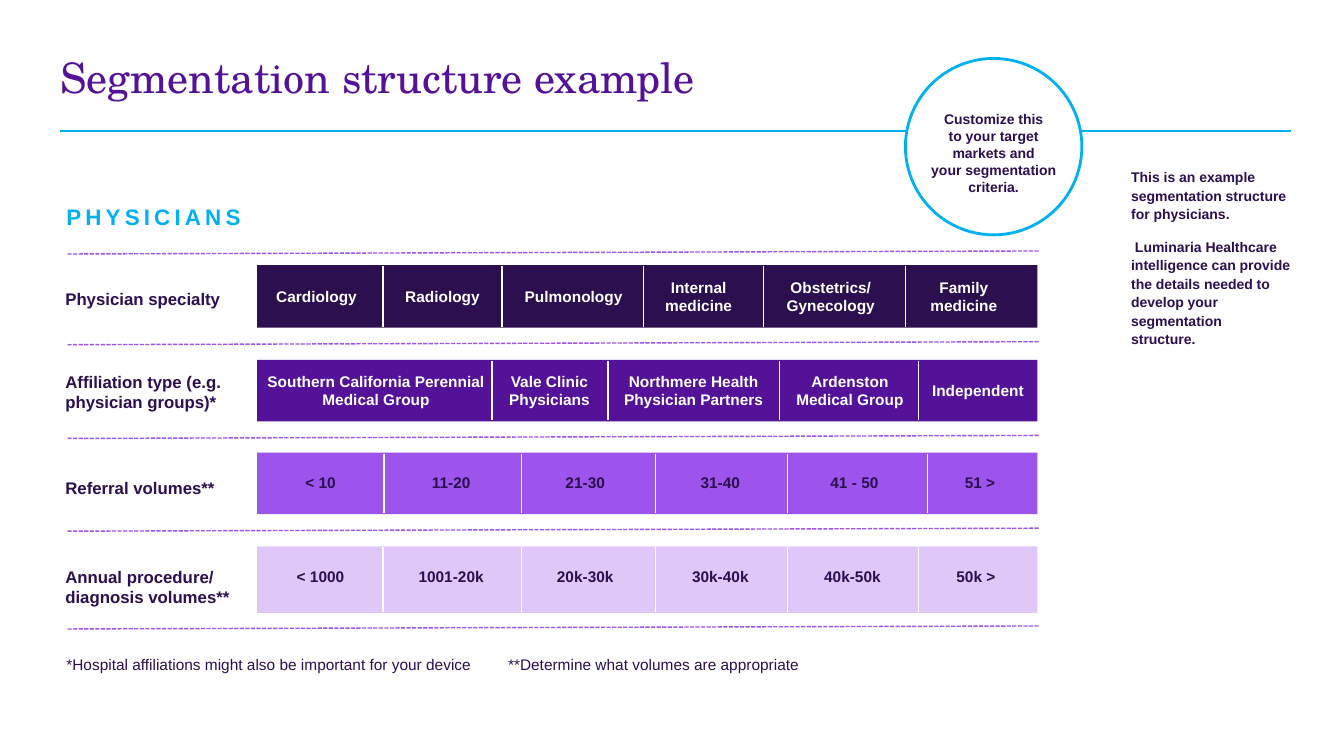
from pptx import Presentation
from pptx.dml.color import RGBColor
from pptx.enum.dml import MSO_LINE
from pptx.enum.shapes import MSO_CONNECTOR, MSO_SHAPE
from pptx.enum.text import MSO_ANCHOR, PP_ALIGN
from pptx.oxml.ns import qn
from pptx.util import Inches, Pt
from lxml import etree

STRAIGHT = MSO_CONNECTOR.STRAIGHT
RECTANGLE, OVAL = MSO_SHAPE.RECTANGLE, MSO_SHAPE.OVAL
TOP, MIDDLE = MSO_ANCHOR.TOP, MSO_ANCHOR.MIDDLE
LEFT, CENTER = PP_ALIGN.LEFT, PP_ALIGN.CENTER
DASHED = MSO_LINE.SQUARE_DOT

WHITE, INK, CYAN = "FFFFFF", "2B0F4F", "00B0F0"
PURPLE, VIOLET, LILAC = "541299", "9C54ED", "DFC7F9"
BAND_LEFT, BAND_WIDTH = 2.55, 7.74
CELL_HEIGHT = 0.62

# Each row: label, label top, band top, band height, cell top, fill, text colour,
# cells as (text, left, width), divider positions
ROWS = [
    ("Physician specialty", 2.82, 2.63, 0.62, 2.63, INK, WHITE,
     [("Cardiology", 2.55, 1.18), ("Radiology", 3.91, 0.96),
      ("Pulmonology", 5.07, 1.24), ("Internal medicine", 6.48, 0.9),
      ("Obstetrics/ Gynecology", 7.62, 1.24), ("Family medicine", 9.11, 0.9)],
     [3.8, 4.98, 6.38, 7.57, 8.98]),
    ("Affiliation type (e.g. physician groups)*", 3.64, 3.57, 0.61, 3.56, PURPLE, WHITE,
     [("Southern California Perennial Medical Group", 2.52, 2.42),
      ("Vale Clinic Physicians", 4.82, 1.26),
      ("Northmere Health Physician Partners", 6.05, 1.66),
      ("Ardenston Medical Group", 7.69, 1.48), ("Independent", 9.07, 1.26)],
     [4.88, 6.03, 7.73, 9.11]),
    ("Referral volumes**", 4.69, 4.49, 0.61, 4.48, VIOLET, INK,
     [("< 10", 2.73, 0.9), ("11-20", 3.99, 0.97), ("21-30", 5.32, 0.97),
      ("31-40", 6.66, 0.97), ("41 - 50", 7.99, 0.97), ("51 >", 9.32, 0.8)],
     [3.81, 5.17, 6.5, 7.81, 9.2]),
    ("Annual procedure/ diagnosis volumes**", 5.57, 5.42, 0.66, 5.41, LILAC, INK,
     [("< 1000", 2.73, 0.9), ("1001-20k", 3.99, 0.97), ("20k-30k", 5.32, 0.97),
      ("30k-40k", 6.66, 0.97), ("40k-50k", 7.99, 0.93), ("50k >", 9.28, 0.8)],
     [3.8, 5.17, 6.5, 7.81, 9.11]),
]
SEPARATOR_TOPS = [2.52, 3.42, 4.35, 5.27, 6.24]
CALLOUT = ["Customize this", "to your target", "markets and", "your segmentation criteria."]
SIDEBAR = [
    "This is an example segmentation structure for physicians.",
    " Luminaria Healthcare intelligence can provide the details needed to "
    "develop your segmentation\vstructure.",
]


def rgb(value):
    return RGBColor.from_string(value)


def style_paragraph(para, size, color, bold=True, align=LEFT, name="Arial"):
    para.alignment = align
    para.font.name = name
    para.font.size = Pt(size)
    para.font.bold = bold
    para.font.color.rgb = rgb(color)


def add_text(page, frame, lines, size, color, bold=True, align=LEFT, anchor=TOP):
    box = page.shapes.add_textbox(*map(Inches, frame))
    box.text_frame.word_wrap = True
    box.text_frame.vertical_anchor = anchor
    box.text_frame.text = "\n".join(lines)
    for para in box.text_frame.paragraphs:
        style_paragraph(para, size, color, bold, align)
    return box.text_frame.paragraphs


def add_figure(page, kind, frame, fill, outline=None):
    shape = page.shapes.add_shape(kind, *map(Inches, frame))
    shape.shadow.inherit = False
    shape.fill.solid()
    shape.fill.fore_color.rgb = rgb(fill)
    if outline:
        shape.line.color.rgb = rgb(outline)
        shape.line.width = Pt(2)
    else:
        shape.line.fill.background()


def add_line(page, ends, color, width=1, dash=None):
    line = page.shapes.add_connector(STRAIGHT, *map(Inches, ends))
    line.line.color.rgb = rgb(color)
    line.line.width = Pt(width)
    if dash:
        line.line.dash_style = dash
    etree.SubElement(line.element.spPr, qn("a:effectLst"))


def add_title(page, text):
    title = page.shapes.title
    title.left, title.top, title.width, title.height = map(Inches, (0.5, 0.36, 8.37, 0.87))
    title.text_frame.text = text
    title.text_frame.word_wrap = True
    title.text_frame.vertical_anchor = MIDDLE
    para = title.text_frame.paragraphs[0]
    style_paragraph(para, 30, PURPLE, False, name="TeX Gyre Schola")
    para.line_spacing = 0.9


def add_row(page, row):
    label, label_top, top, height, cell_top, fill, color, cells, dividers = row
    add_figure(page, RECTANGLE, (BAND_LEFT, top, BAND_WIDTH, height), fill)
    add_text(page, (0.55, label_top, 2.0, 0.5), [label], 12, INK)
    for text, left, width in cells:
        add_text(page, (left, cell_top, width, CELL_HEIGHT), [text], 11, color,
                 align=CENTER, anchor=MIDDLE)
    for x in dividers:
        add_line(page, (x, top + 0.01, x, top + height - 0.01), WHITE)


def main():
    deck = Presentation()
    deck.slide_width, deck.slide_height = Inches(13.33), Inches(7.5)
    page = deck.slides.add_slide(deck.slide_layouts[5])

    # Heading
    add_title(page, "Segmentation structure example")
    add_line(page, (0.6, 1.3, 12.8, 1.3), CYAN, 1.5)
    heading = add_text(page, (0.56, 1.97, 4.7, 0.37), ["PHYSICIANS"], 16, CYAN)[0]
    heading.runs[0].font._element.set("spc", "300")

    # Segmentation rows and dashed separators
    for row in ROWS:
        add_row(page, row)
    for y in SEPARATOR_TOPS:
        add_line(page, (0.67, y, 10.3, y - 0.03), VIOLET, dash=DASHED)

    # Callout
    add_figure(page, OVAL, (8.98, 0.58, 1.75, 1.75), WHITE, CYAN)
    add_text(page, (8.97, 1.05, 1.77, 0.94), CALLOUT, 10, INK, align=CENTER)

    # Sidebar
    for para in add_text(page, (11.12, 1.61, 1.79, 2.14), SIDEBAR, 10, INK):
        para.line_spacing = 1.1
        para.space_before = Pt(10)

    # Footnotes
    add_text(page, (0.56, 6.45, 4.4, 0.29),
             ["*Hospital affiliations might also be important for your device"],
             11, INK, bold=False)
    add_text(page, (4.94, 6.45, 4.69, 0.29), ["**Determine what volumes are appropriate"],
             11, INK, bold=False)

    deck.save("out.pptx")


if __name__ == "__main__":
    main()
